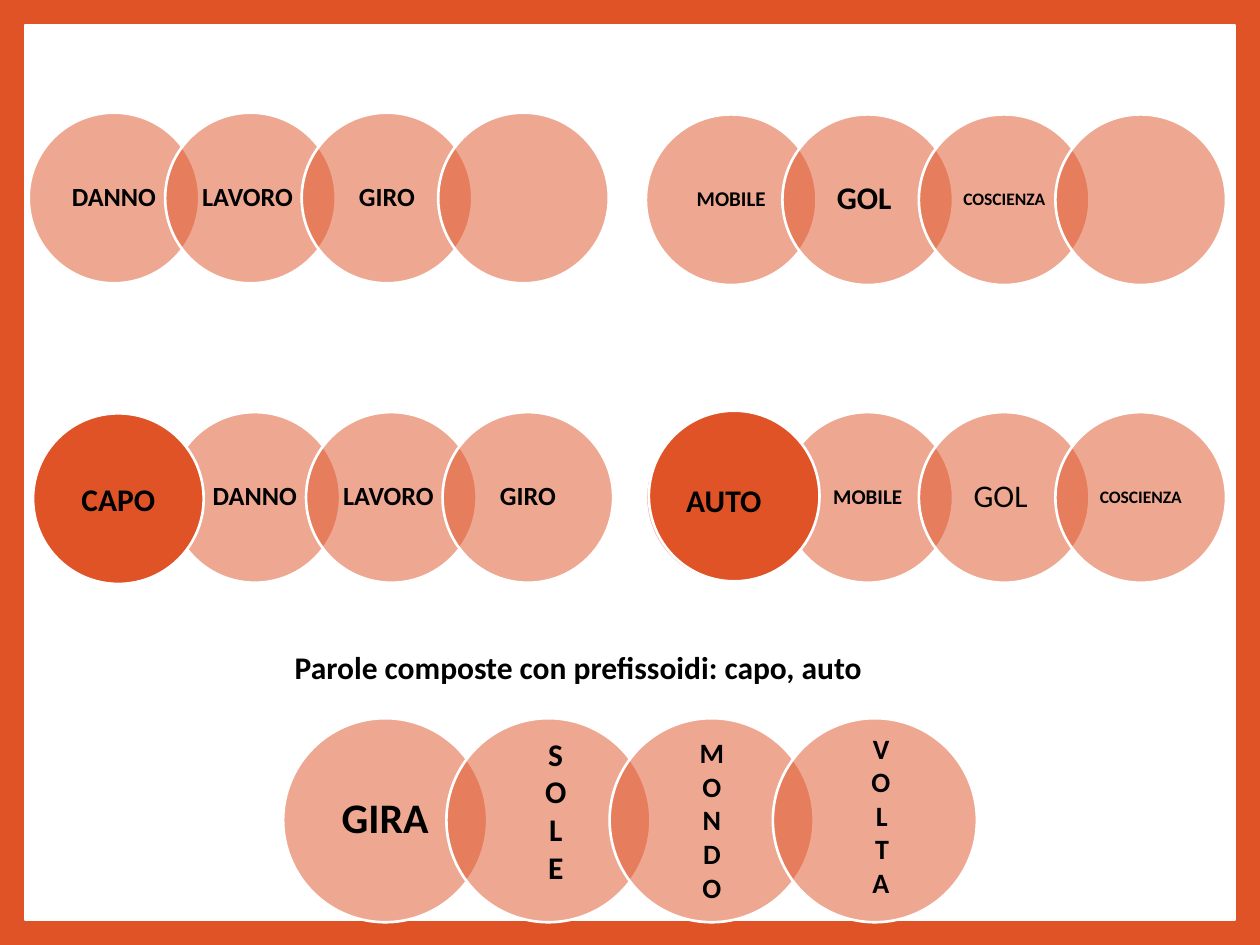
"""Build a slide of overlapping circles that form Italian compound words."""
import pptx
import pptx.util
import pptx.dml.color
import pptx.enum.shapes
import pptx.enum.text
import pptx.oxml
import pptx.oxml.ns

Pt = pptx.util.Pt
ALIGN = pptx.enum.text.PP_ALIGN
ANCHOR = pptx.enum.text.MSO_ANCHOR
COLORS = {"orange": "DF5327", "white": "FFFFFF", "black": "000000"}
OVERLAP_PITCH = 0.8


def add_filled_shape(kind, box, fill, line_width, alpha=None):
    shape = slide.shapes.add_shape(kind, *[Pt(length) for length in box])
    shape.shadow.inherit = False
    shape.fill.solid()
    shape.fill.fore_color.rgb = pptx.dml.color.RGBColor.from_string(COLORS[fill])
    shape.line.color.rgb = pptx.dml.color.RGBColor.from_string(COLORS["white"])
    shape.line.width = Pt(line_width)
    if alpha:
        color = shape.fill._xPr.find(".//" + pptx.oxml.ns.qn("a:srgbClr"))
        namespace = pptx.oxml.ns.nsdecls("a")
        color.append(pptx.oxml.parse_xml(f'<a:alpha {namespace} val="{alpha * 1000}"/>'))
    return shape


def write_text(shape, text, size, bold=True, align=ALIGN.CENTER, **frame_format):
    frame = shape.text_frame
    for name, value in {"word_wrap": True, **frame_format}.items():
        setattr(frame, name, value)
    paragraph = frame.paragraphs[0]
    paragraph.alignment = align
    run = paragraph.add_run()
    run.text = text
    for name, value in {"name": "Calibri", "size": Pt(size), "bold": bold}.items():
        setattr(run.font, name, value)
    run.font.color.rgb = pptx.dml.color.RGBColor.from_string(COLORS["black"])


presentation = pptx.Presentation()
presentation.slide_width, presentation.slide_height = Pt(720), Pt(540)
slide = presentation.slides.add_slide(presentation.slide_layouts[6])
slide.background.fill.solid()
slide.background.fill.fore_color.rgb = pptx.dml.color.RGBColor.from_string(COLORS["orange"])
add_filled_shape(pptx.enum.shapes.MSO_SHAPE.RECTANGLE, (14.4, 14.4, 691.2, 511.2), "white", 1)

oval = pptx.enum.shapes.MSO_SHAPE.OVAL
capo_words = [("DANNO", 15, True), ("LAVORO ", 15, True), ("GIRO", 15, True)]
auto_words = [("MOBILE", 12, True), ("GOL ", 18, True), ("COSCIENZA", 10, True)]
plain_auto_words = [(text, size, text != "GOL ") for text, size, bold in auto_words]
chains = [
    (16.4, 64.4, 97.5, capo_words + [None]),
    (369.1, 65.4, 97.5, auto_words + [None]),
    (18.9, 235.5, 97.5, [None] + capo_words),
    (369.1, 235.5, 97.5, [None] + plain_auto_words),
    (161.8, 410.4, 116.6, [("GIRA", 24, True), None, None, None]),
]
circle_margins = {"margin_left": Pt(5), "margin_right": Pt(5),
                  "margin_top": Pt(1.5), "margin_bottom": Pt(1.5),
                  "vertical_anchor": ANCHOR.MIDDLE}
for left, top, diameter, words in chains:
    for index, word in enumerate(words):
        box = (left + index * diameter * OVERLAP_PITCH, top, diameter, diameter)
        circle = add_filled_shape(oval, box, "orange", 1.5, alpha=50)
        if word:
            write_text(circle, *word, **circle_margins)
            circle.text_frame.paragraphs[0].line_spacing = 0.9

prefixes = [
    ("CAPO", 18.9, 236.2, ALIGN.CENTER, circle_margins),
    ("AUTO", 370.8, 234.7, ALIGN.LEFT, {"margin_top": Pt(7.6), "vertical_anchor": ANCHOR.MIDDLE}),
]
for text, left, top, align, frame_format in prefixes:
    circle = add_filled_shape(oval, (left, top, 97.5, 97.5), "orange", 1.5)
    write_text(circle, text, 18, align=align, **frame_format)

caption = slide.shapes.add_textbox(Pt(161.3), Pt(366.5), Pt(402.5), Pt(29))
write_text(caption, "Parole composte con prefissoidi: capo, auto", 18, align=ALIGN.LEFT)

vertical_words = [
    ("SOLE", 18, 297.4, 406.8, 40.3, 112.3),
    ("MONDO", 16, 388.1, 406.1, 37.4, 124.6),
    ("VOLTA", 16, 484.6, 406.8, 37.4, 118.1),
]
for text, size, *box in vertical_words:
    text_box = slide.shapes.add_textbox(*[Pt(length) for length in box])
    write_text(text_box, text, size)
    text_box.text_frame._txBody.bodyPr.set("vert", "wordArtVert")

presentation.save("out.pptx")
